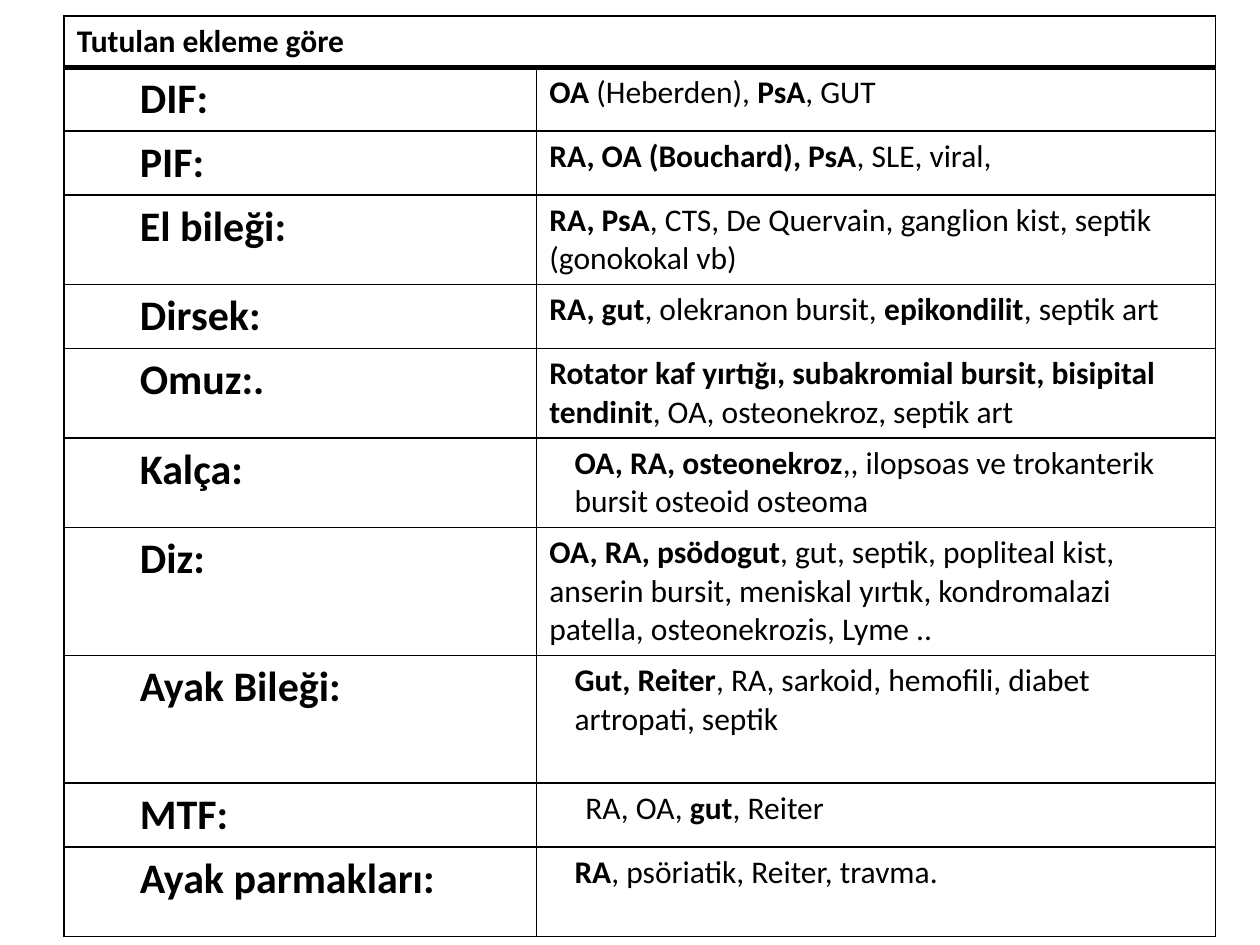
import pptx
import pptx.util
import pptx.dml.color
import pptx.oxml
import pptx.oxml.ns

Pt = pptx.util.Pt
FONT, INK, PAPER = "Calibri", "000000", "FFFFFF"
HEAD = "Tutulan ekleme göre"
LEFT, TOP = 36.7, 9.2
COLS = [270, 388]
TITLE, SHORT, MID, TALL = 29.2, 36.4, 51, 73
HANG = (58.5, -22.5)
FLUSH, INSET, DEEP = (0, 0), (14.4, 0), (20.6, 0)

# joint, row height, indent, runs that alternate bold and plain
ROWS = [
    ("DIF:", SHORT, FLUSH, ["OA", " (Heberden), ", "PsA", ", GUT"]),
    ("PIF:", SHORT, FLUSH, ["RA, OA (Bouchard), PsA", ", SLE, viral,"]),
    ("El bileği:", MID, FLUSH,
     ["RA, PsA", ", CTS, De Quervain, ganglion kist, septik (gonokokal vb)"]),
    ("Dirsek:", SHORT, FLUSH,
     ["RA, gut", ", olekranon bursit, ", "epikondilit", ", septik art"]),
    ("Omuz:.", MID, FLUSH,
     ["Rotator kaf yırtığı, subakromial bursit, bisipital tendinit",
      ", OA, osteonekroz, septik art"]),
    ("Kalça:", MID, INSET,
     ["OA, RA, osteonekroz", ",, ilopsoas ve trokanterik bursit osteoid osteoma"]),
    ("Diz:", TALL, FLUSH,
     ["OA, RA, psödogut", ", gut, septik, popliteal kist, anserin bursit, "
      "meniskal yırtık, kondromalazi patella, osteonekrozis, Lyme .."]),
    ("Ayak Bileği:", TALL, INSET,
     ["Gut, Reiter", ", RA, sarkoid, hemofili, diabet artropati, septik"]),
    ("MTF:", SHORT, DEEP, ["", "RA, OA, ", "gut", ", Reiter"]),
    ("Ayak parmakları:", MID, INSET, ["RA", ", psöriatik, Reiter, travma."]),
]


def color(code):
    return pptx.dml.color.RGBColor.from_string(code)


def write(cell, runs, size=18, indent=FLUSH):
    para = cell.text_frame.paragraphs[0]
    props = para._p.get_or_add_pPr()
    props.set("marL", str(Pt(indent[0])))
    props.set("indent", str(Pt(indent[1])))
    for spot, text in enumerate(runs):
        if text:
            run = para.add_run()
            run.text = text
            run.font.name = FONT
            run.font.size = Pt(size)
            run.font.bold = spot % 2 == 0
            run.font.color.rgb = color(INK)


def frame(cell, row):
    cell.fill.solid()
    cell.fill.fore_color.rgb = color(PAPER)
    cell.margin_left = cell.margin_right = Pt(7.2)
    cell.margin_top = cell.margin_bottom = Pt(3.6)
    wide = {"T": 3 if row == 1 else 1, "B": 3 if row == 0 else 1}
    for spot, side in enumerate("LRTB"):
        line = pptx.oxml.parse_xml(
            f'<a:ln{side} {pptx.oxml.ns.nsdecls("a")} w="{Pt(wide.get(side, 1))}">'
            f'<a:solidFill><a:srgbClr val="{INK}"/></a:solidFill></a:ln{side}>')
        cell._tc.get_or_add_tcPr().insert(spot, line)


def main():
    deck = pptx.Presentation()
    deck.slide_width, deck.slide_height = Pt(720), Pt(540)
    slide = deck.slides.add_slide(deck.slide_layouts[6])
    highs = [TITLE] + [row[1] for row in ROWS]
    table = slide.shapes.add_table(
        len(highs), len(COLS), Pt(LEFT), Pt(TOP), Pt(sum(COLS)), Pt(sum(highs))).table
    table.first_row = table.horz_banding = False
    for col, width in zip(table.columns, COLS):
        col.width = Pt(width)
    for num, high in enumerate(highs):
        table.rows[num].height = Pt(high)
        for cell in table.rows[num].cells:
            frame(cell, num)

    table.cell(0, 0).merge(table.cell(0, 1))
    write(table.cell(0, 0), [HEAD])
    for num, (joint, _, indent, runs) in enumerate(ROWS, 1):
        write(table.cell(num, 0), [joint], size=24, indent=HANG)
        write(table.cell(num, 1), runs, indent=indent)
    deck.save("out.pptx")


if __name__ == "__main__":
    main()
